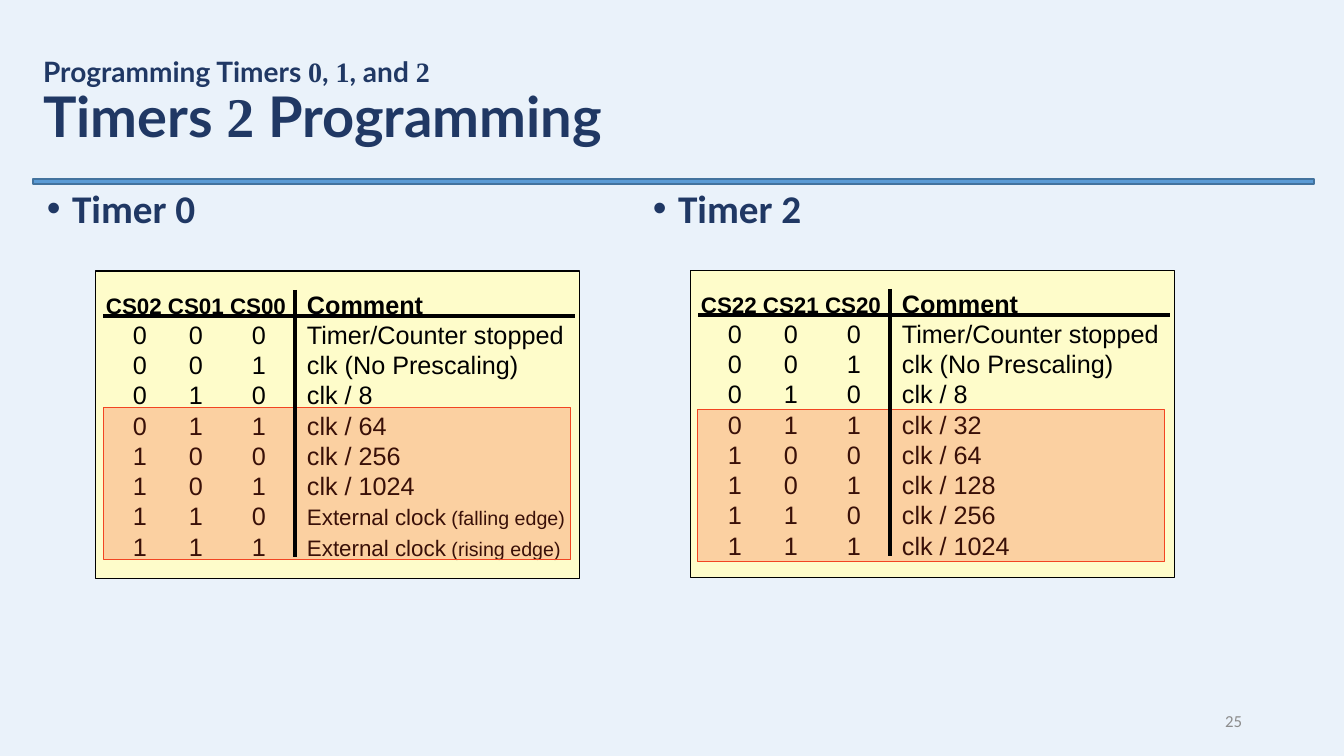
import pptx
import pptx.util
import pptx.dml.color
import pptx.enum.shapes
import pptx.enum.text
import pptx.oxml.ns
import lxml.etree

RGBColor = pptx.dml.color.RGBColor
BACKGROUND = RGBColor(0xEA, 0xF2, 0xFA)
NAVY = RGBColor(0x20, 0x38, 0x64)
BLUE = RGBColor(0x5B, 0x9B, 0xD5)
BLUE_EDGE = RGBColor(0x43, 0x73, 0x9E)
CREAM = RGBColor(0xFE, 0xFC, 0xCA)
ORANGE = RGBColor(0xF2, 0x45, 0x22)
GRAY = RGBColor(0x8C, 0x8C, 0x8C)
BLACK = RGBColor(0, 0, 0)
RECTANGLE = pptx.enum.shapes.MSO_SHAPE.RECTANGLE
STRAIGHT = pptx.enum.shapes.MSO_CONNECTOR.STRAIGHT
ANCHOR = pptx.enum.text.MSO_ANCHOR
ALIGN = pptx.enum.text.PP_ALIGN
Pt = pptx.util.Pt
qn = pptx.oxml.ns.qn
SCALE = 914400 / 100.8


def px(*lengths):
    return [round(length * SCALE) for length in lengths]


def add_box(left, top, width, height, fill, edge, edge_width):
    box = slide.shapes.add_shape(RECTANGLE, *px(left, top, width, height))
    box.shadow.inherit = False
    box.fill.solid()
    box.fill.fore_color.rgb = fill
    box.line.color.rgb = edge
    box.line.width = Pt(edge_width)
    return box


presentation = pptx.Presentation()
presentation.slide_width, presentation.slide_height = px(1344, 756)
slide = presentation.slides.add_slide(presentation.slide_layouts[5])
slide.background.fill.solid()
slide.background.fill.fore_color.rgb = BACKGROUND

# Title and rule
add_box(33, 179, 1281, 5, BLUE, BLUE_EDGE, 1)
title = slide.shapes.title
title.left, title.top, title.width, title.height = px(33, 40, 1281, 128)
title.text_frame.auto_size = pptx.enum.text.MSO_AUTO_SIZE.NONE
title.text_frame.vertical_anchor = ANCHOR.MIDDLE
paragraph = title.text_frame.paragraphs[0]
paragraph.alignment = ALIGN.LEFT
paragraph.line_spacing = 0.9
paragraph.font.bold = True
paragraph.font.color.rgb = NAVY
title_lines = [
    (20, ["Programming Timers ", "0", ", ", "1", ", and ", "2"]),
    (40, ["Timers ", "2 ", "Programming"]),
]
for line_index, (size, pieces) in enumerate(title_lines):
    if line_index:
        paragraph.add_line_break()
    for piece in pieces:
        run = paragraph.add_run()
        run.text = piece
        run.font.size = Pt(size)
        run.font.name = "Times New Roman" if piece.strip().isdigit() else "Lato"

# Slide number
number = slide.shapes.add_textbox(*px(950, 701, 302, 40))
number.text_frame.word_wrap = True
number.text_frame.vertical_anchor = ANCHOR.MIDDLE
paragraph = number.text_frame.paragraphs[0]
paragraph.text = "25"
paragraph.alignment = ALIGN.RIGHT
paragraph.font.name = "Calibri"
paragraph.font.size = Pt(12)
paragraph.font.color.rgb = GRAY

# Timer columns: heading and clock select panel
common = ["Timer/Counter stopped", "clk (No Prescaling)", "clk / 8"]
timers = [
    (0, 37, 96, 271, 104, 408,
     common + ["clk / 64", "clk / 256", "clk / 1024",
               "External clock| (falling edge)", "External clock| (rising edge)"]),
    (2, 643, 691, 270, 698, 410,
     common + ["clk / 32", "clk / 64", "clk / 128", "clk / 256", "clk / 1024"]),
]
tab_stops = [(34, "ctr"), (90, "ctr"), (153, "ctr"), (201, "l")]

for timer, heading_left, left, top, marked_left, marked_top, comments in timers:
    heading = slide.shapes.add_textbox(*px(heading_left, 187, 613, 553))
    heading.text_frame.word_wrap = True
    paragraph = heading.text_frame.paragraphs[0]
    paragraph.text = f"Timer {timer}"
    paragraph.line_spacing = 0.85
    paragraph.space_before = Pt(10)
    paragraph.font.name = "Calibri"
    paragraph.font.size = Pt(28)
    paragraph.font.bold = True
    paragraph.font.color.rgb = NAVY
    properties = paragraph._p.get_or_add_pPr()
    properties.set("marL", "228600")
    properties.set("indent", "-228600")
    bullet_font = lxml.etree.Element(qn("a:buFont"), typeface="Arial")
    bullet = lxml.etree.Element(qn("a:buChar"), char="•")
    properties.find(qn("a:spcBef")).addnext(bullet_font)
    bullet_font.addnext(bullet)

    # Panel text: three bits and a comment per row, set on tab stops
    panel = add_box(left, top, 484, 308, CREAM, BLACK, 0.75)
    frame = panel.text_frame
    frame.word_wrap = True
    frame.margin_left, frame.margin_right = px(10, 0)
    frame.vertical_anchor = ANCHOR.MIDDLE
    header = [(f"CS{timer}2 CS{timer}1 CS{timer}0", 16), ("\tComment", 18)]
    rows = [header]
    for value, comment in enumerate(comments):
        bits = "".join(f"\t{bit}" for bit in f"{value:03b}")
        main, *detail = comment.split("|")
        row = [(f"{bits}\t", 18), (main, 16 if detail else 18)]
        rows.append(row + [(text, 14) for text in detail])
    for row_index, row in enumerate(rows):
        paragraph = frame.paragraphs[0] if row_index == 0 else frame.add_paragraph()
        paragraph.alignment = ALIGN.LEFT
        paragraph.line_spacing = Pt(21.6)
        paragraph.font.name = "Arial"
        paragraph.font.bold = row_index == 0
        paragraph.font.color.rgb = BLACK
        for text, size in row:
            run = paragraph.add_run()
            run.text = text
            run.font.size = Pt(size)
        tabs = lxml.etree.Element(qn("a:tabLst"))
        for position, alignment in tab_stops:
            lxml.etree.SubElement(tabs, qn("a:tab"), pos=str(px(position)[0]), algn=alignment)
        paragraph._p.pPr.find(qn("a:lnSpc")).addnext(tabs)

    # Header line, marked rows, column line
    header_line = slide.shapes.add_connector(
        STRAIGHT, *px(left + 479, top + 45, left + 7, top + 45))
    marked = add_box(marked_left, marked_top, 467, 152, ORANGE, ORANGE, 0.75)
    color = marked._element.spPr.find(qn("a:solidFill"))[0]
    lxml.etree.SubElement(color, qn("a:alpha"), val="24000")
    column_line = slide.shapes.add_connector(
        STRAIGHT, *px(left + 199, top + 19, left + 199, top + 286))
    for connector in (header_line, column_line):
        connector.line.color.rgb = BLACK
        connector.line.width = Pt(2.25)
        lxml.etree.SubElement(connector._element.spPr, qn("a:effectLst"))

presentation.save("out.pptx")
